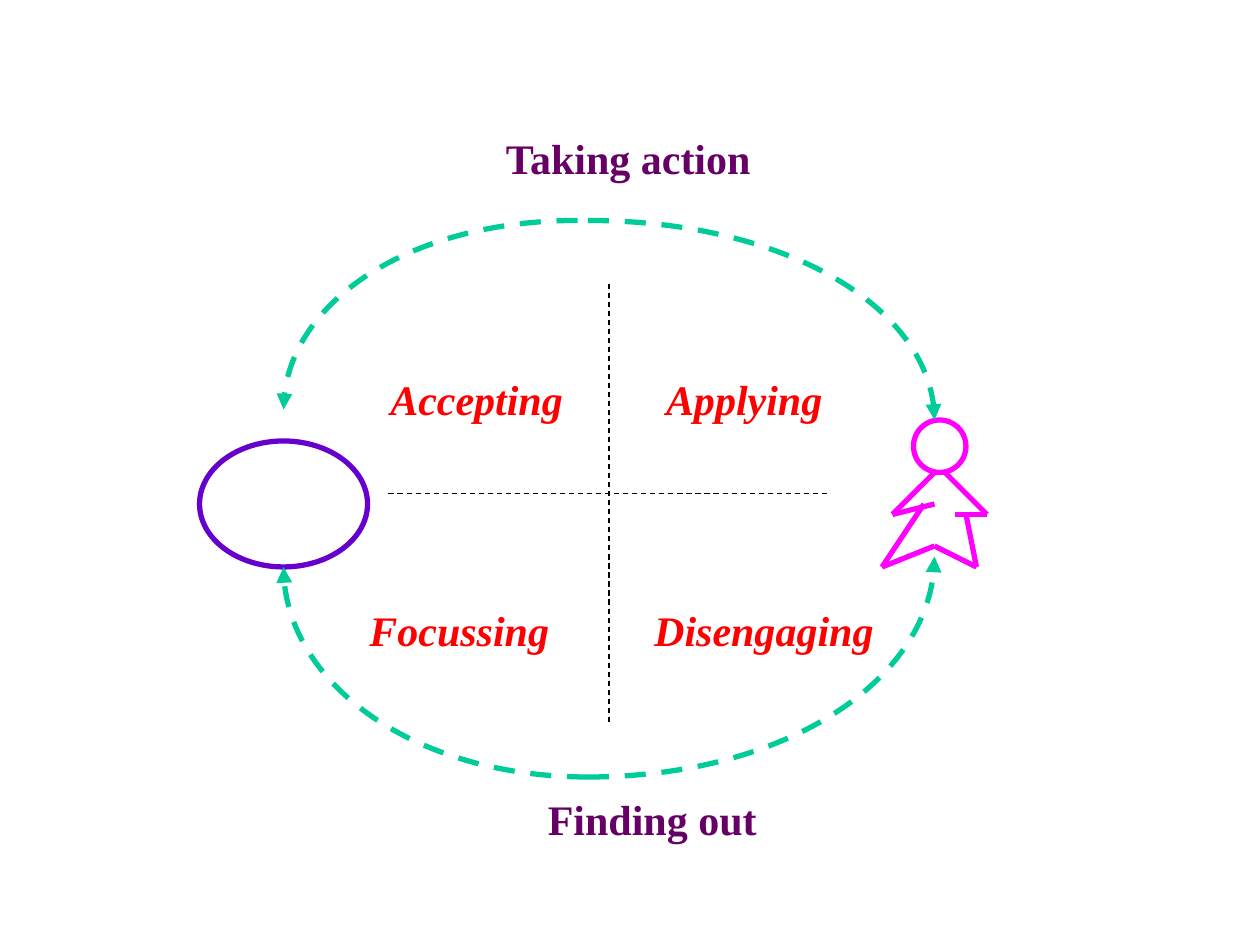
from dataclasses import dataclass

from lxml import etree
from pptx import Presentation, util as u
from pptx.dml.color import RGBColor
from pptx.enum import dml, shapes, text
from pptx.oxml import ns

PX = 9525
CURVE = 0.5523
FONT = "Times New Roman"
COLORS = {
    "figure": "FF00FF",
    "oval": "6600CC",
    "heading": "660066",
    "stage": "FF0000",
    "axis": "000000",
    "cycle": "00CC99",
}


@dataclass(frozen=True)
class Segment:
    x1: int
    y1: int
    x2: int
    y2: int


@dataclass(frozen=True)
class Ellipse:
    left: int
    top: int
    width: int
    height: int
    color: str


@dataclass(frozen=True)
class Label:
    words: str
    left: int
    top: int
    width: int
    color: str
    italic: bool = False
    tabs: tuple[int, ...] = ()


ELLIPSES = [
    Ellipse(696, 320, 40, 40, "figure"),
    Ellipse(152, 336, 128, 96, "oval"),
]
FIGURE_LINES = [
    Segment(712, 360, 680, 392),
    Segment(720, 360, 752, 392),
    Segment(680, 392, 712, 384),
    Segment(728, 392, 752, 392),
    Segment(704, 384, 672, 432),
    Segment(672, 432, 712, 416),
    Segment(712, 416, 744, 432),
    Segment(736, 392, 744, 432),
]
AXES = [Segment(464, 216, 464, 552), Segment(296, 376, 632, 376)]
CYCLE_ARCS = [
    Segment(448, 168, 712, 320),
    Segment(440, 168, 216, 312),
    Segment(448, 592, 216, 432),
    Segment(448, 592, 712, 424),
]
LABELS = [
    Label("Finding out", 408, 600, 488, "heading"),
    Label("Taking action", 376, 96, 352, "heading"),
    Label("\tAccepting\tApplying", 224, 280, 568, "stage", True, (64, 274)),
    Label("\tFocussing\tDisengaging", 224, 456, 600, "stage", True, (48, 265)),
]


def add_child(parent, tag: str, **attributes: str):
    return etree.SubElement(parent, ns.qn(tag), attributes)


def format_line(line, color: str, width: float, dashed: bool = False) -> None:
    line.color.rgb = RGBColor.from_string(COLORS[color])
    line.width = u.Pt(width)
    if dashed:
        line.dash_style = dml.MSO_LINE.DASH


def add_ellipse(slide, ellipse: Ellipse) -> None:
    shape = slide.shapes.add_shape(
        shapes.MSO_SHAPE.OVAL,
        ellipse.left * PX, ellipse.top * PX, ellipse.width * PX, ellipse.height * PX,
    )
    shape.shadow.inherit = False
    shape.fill.background()
    format_line(shape.line, ellipse.color, 3)


def add_segment(slide, segment: Segment, color: str, width: float, dashed: bool = False) -> None:
    connector = slide.shapes.add_connector(
        shapes.MSO_CONNECTOR.STRAIGHT,
        segment.x1 * PX, segment.y1 * PX, segment.x2 * PX, segment.y2 * PX,
    )
    format_line(connector.line, color, width, dashed)
    add_child(connector._element.spPr, "a:effectLst")


def add_arc(slide, arc: Segment) -> None:
    points = [
        (round(arc.x1 + CURVE * (arc.x2 - arc.x1)), arc.y1),
        (arc.x2, round(arc.y2 + CURVE * (arc.y1 - arc.y2))),
        (arc.x2, arc.y2),
    ]
    builder = slide.shapes.build_freeform(arc.x1, arc.y1, scale=PX)
    builder.add_line_segments(points, close=False)
    shape = builder.convert_to_shape()
    path = shape._element.spPr.find(".//" + ns.qn("a:path"))
    straight_parts = path.findall(ns.qn("a:lnTo"))
    curve = add_child(path, "a:cubicBezTo")
    for part in straight_parts:
        curve.append(part[0])
        path.remove(part)
    shape.shadow.inherit = False
    shape.fill.background()
    format_line(shape.line, "cycle", 3, dashed=True)
    add_child(shape.line._get_or_add_ln(), "a:tailEnd", type="triangle")


def write_text(frame, words: str, *, color: str, italic: bool, tabs: tuple[int, ...]) -> None:
    frame.word_wrap = True
    frame.auto_size = text.MSO_AUTO_SIZE.SHAPE_TO_FIT_TEXT
    paragraph = frame.paragraphs[0]
    properties = paragraph._p.get_or_add_pPr()
    add_child(add_child(properties, "a:spcBef"), "a:spcPct", val="50000")
    if tabs:
        tab_list = add_child(properties, "a:tabLst")
        for position in tabs:
            add_child(tab_list, "a:tab", pos=str(position * PX), algn="l")
    run = paragraph.add_run()
    run.text = words
    run.font.name = FONT
    run.font.size = u.Pt(24)
    run.font.bold = True
    run.font.italic = italic
    run.font.color.rgb = RGBColor.from_string(COLORS[color])


def add_label(slide, label: Label) -> None:
    box = slide.shapes.add_textbox(
        label.left * PX, label.top * PX, label.width * PX, 48 * PX
    )
    write_text(
        box.text_frame, label.words,
        color=label.color, italic=label.italic, tabs=label.tabs,
    )


def main() -> None:
    presentation = Presentation()
    presentation.slide_width = 960 * PX
    presentation.slide_height = 720 * PX
    slide = presentation.slides.add_slide(presentation.slide_layouts[6])
    for ellipse in ELLIPSES:
        add_ellipse(slide, ellipse)
    for segment in FIGURE_LINES:
        add_segment(slide, segment, "figure", 3)
    for label in LABELS:
        add_label(slide, label)
    for axis in AXES:
        add_segment(slide, axis, "axis", 0.75, dashed=True)
    for arc in CYCLE_ARCS:
        add_arc(slide, arc)
    presentation.save("out.pptx")


if __name__ == "__main__":
    main()
